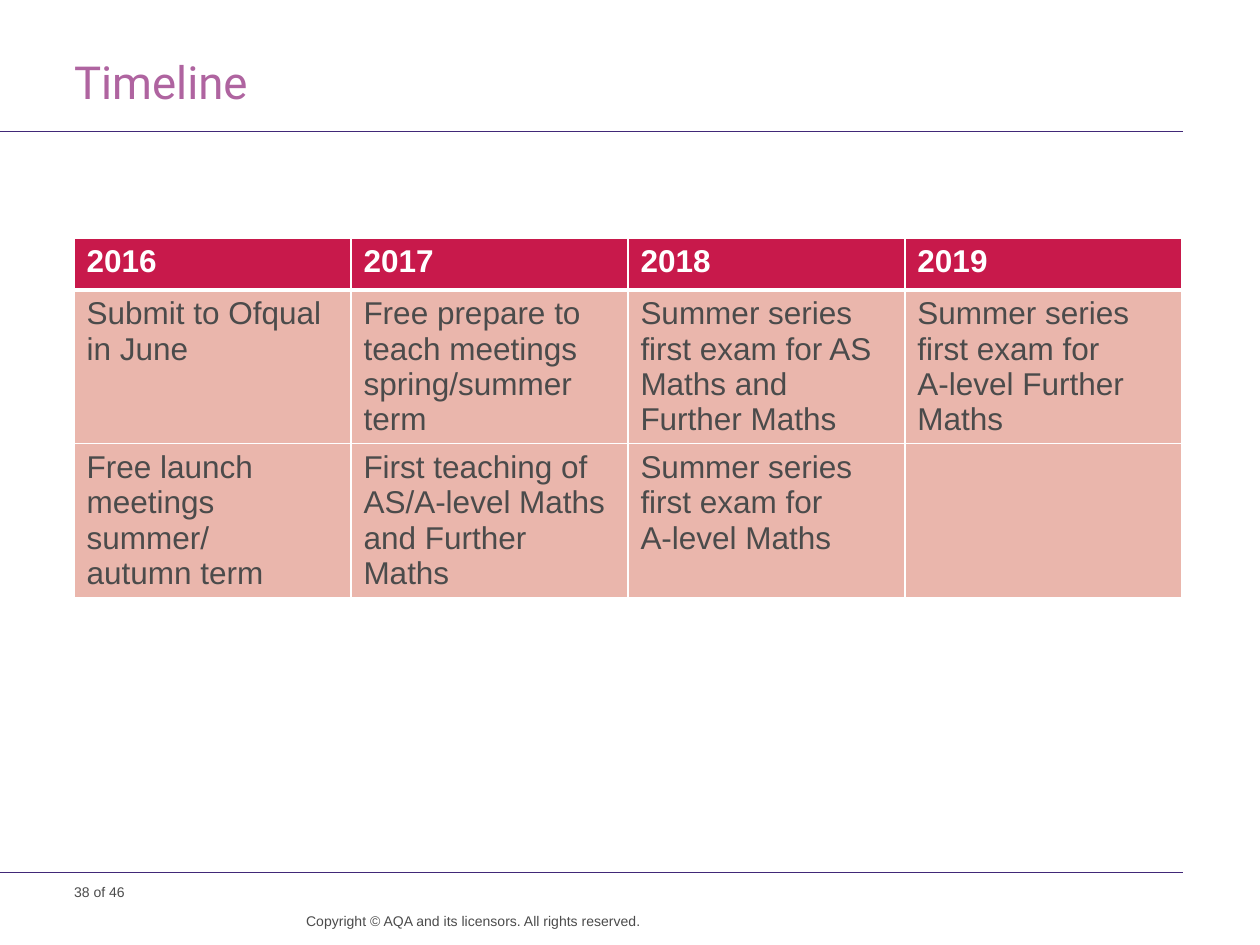
from dataclasses import dataclass

from lxml.etree import SubElement
from pptx import Presentation
from pptx.dml.color import RGBColor
from pptx.enum.shapes import MSO_CONNECTOR
from pptx.enum.text import MSO_ANCHOR, MSO_AUTO_SIZE, PP_ALIGN
from pptx.oxml.ns import qn
from pptx.util import Emu, Pt


@dataclass(frozen=True)
class Theme:
    heading: str = "AF64A0"
    rule: str = "412878"
    ink: str = "4B4B4B"
    white: str = "FFFFFF"
    header_fill: str = "C8194B"
    body_fill: str = "EAB6AC"
    heading_font: str = "Roboto"
    body_font: str = "Arial"
    heading_size: int = 26
    table_size: int = 18
    footer_size: int = 8
    rule_width: float = 0.6


def px(length):
    return Emu(round(length * 914400 / 126))


class SlideBuilder:
    def __init__(self, deck, theme):
        self.theme = theme
        self.slide = deck.slides.add_slide(deck.slide_layouts[5])

    def format_runs(self, paragraph, font, size, color, bold=False):
        for run in paragraph.runs:
            run.font.name = font
            run.font.size = Pt(size)
            run.font.bold = bold
            run.font.color.rgb = RGBColor.from_string(color)

    def set_frame(self, frame, right_inset=0):
        frame.word_wrap = True
        frame.auto_size = MSO_AUTO_SIZE.NONE
        frame.vertical_anchor = MSO_ANCHOR.TOP
        frame.margin_left = frame.margin_top = frame.margin_bottom = 0
        frame.margin_right = px(right_inset)

    def title(self, text, left, top, width, height):
        heading = self.slide.shapes.title
        heading.left, heading.top = px(left), px(top)
        heading.width, heading.height = px(width), px(height)
        self.set_frame(heading.text_frame, right_inset=13)
        heading.text_frame.text = text
        paragraph = heading.text_frame.paragraphs[0]
        paragraph.alignment = PP_ALIGN.LEFT
        paragraph.line_spacing = Pt(28)
        self.format_runs(paragraph, self.theme.heading_font,
                         self.theme.heading_size, self.theme.heading)

    def rule(self, left, right, y):
        line = self.slide.shapes.add_connector(
            MSO_CONNECTOR.STRAIGHT, px(left), px(y), px(right), px(y))
        line.line.color.rgb = RGBColor.from_string(self.theme.rule)
        line.line.width = Pt(self.theme.rule_width)
        SubElement(line._element.spPr, qn("a:effectLst"))

    def footer(self, text, left, top, width, height,
               alignment=PP_ALIGN.LEFT, line_spacing=None):
        box = self.slide.shapes.add_textbox(px(left), px(top), px(width), px(height))
        self.set_frame(box.text_frame)
        box.text_frame.text = text
        paragraph = box.text_frame.paragraphs[0]
        paragraph.alignment = alignment
        paragraph.line_spacing = line_spacing
        self.format_runs(paragraph, self.theme.body_font,
                         self.theme.footer_size, self.theme.ink)

    def cell_borders(self, cell, top=1, bottom=1):
        properties = cell._tc.get_or_add_tcPr()
        for side, width in (("L", 1), ("R", 1), ("T", top), ("B", bottom)):
            border = SubElement(properties, qn(f"a:ln{side}"), w=str(Pt(width)))
            fill = SubElement(border, qn("a:solidFill"))
            SubElement(fill, qn("a:srgbClr"), val=self.theme.white)

    def table(self, rows, left, top, column_width, row_heights):
        columns = len(rows[0])
        grid = self.slide.shapes.add_table(
            len(rows), columns, px(left), px(top),
            px(column_width * columns), px(sum(row_heights))).table
        for column in grid.columns:
            column.width = px(column_width)
        for row_index, (texts, height) in enumerate(zip(rows, row_heights)):
            grid.rows[row_index].height = px(height)
            is_header = row_index == 0
            fill = self.theme.header_fill if is_header else self.theme.body_fill
            color = self.theme.white if is_header else self.theme.ink
            for column_index, text in enumerate(texts):
                cell = grid.cell(row_index, column_index)
                self.cell_borders(cell, top=3 if row_index == 1 else 1,
                                  bottom=3 if is_header else 1)
                cell.fill.solid()
                cell.fill.fore_color.rgb = RGBColor.from_string(fill)
                cell.text_frame.text = text
                self.format_runs(cell.text_frame.paragraphs[0], self.theme.body_font,
                                 self.theme.table_size, color, is_header)


def main():
    deck = Presentation()
    deck.slide_width, deck.slide_height = px(1260), px(945)
    builder = SlideBuilder(deck, Theme())

    for rule_y in (132, 873):
        builder.rule(0, 1183, rule_y)
    builder.title("Timeline", 74, 60, 1109, 59)

    milestones = [
        ["2016", "2017", "2018", "2019"],
        ["Submit to Ofqual in June",
         "Free prepare to teach meetings spring/summer term",
         "Summer series first exam for AS Maths and Further Maths",
         "Summer series first exam for\vA-level Further Maths"],
        ["Free launch meetings summer/\vautumn term",
         "First teaching of AS/A-level Maths and Further Maths",
         "Summer series first exam for\vA-level Maths",
         ""],
    ]
    builder.table(milestones, left=74, top=238, column_width=277,
                  row_heights=[52, 153, 153])

    builder.footer("38 of 46", 74, 884, 198, 17)
    builder.footer("Copyright © AQA and its licensors. All rights reserved.",
                   272, 912, 369, 33, PP_ALIGN.RIGHT, Pt(10))
    deck.save("out.pptx")


if __name__ == "__main__":
    main()
